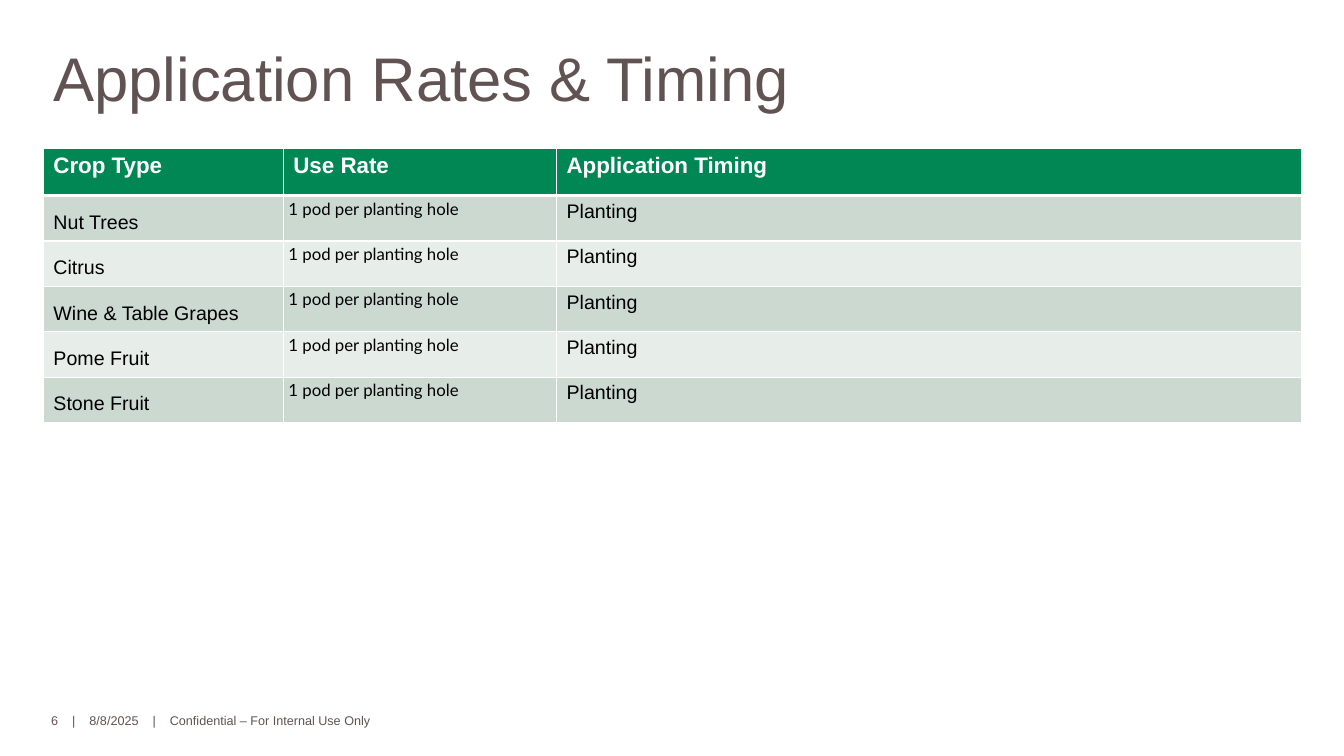
from dataclasses import dataclass

import pptx
import pptx.dml.color
import pptx.oxml
import pptx.oxml.ns
import pptx.util

Inches = pptx.util.Inches
Pt = pptx.util.Pt


@dataclass(frozen=True)
class Theme:
    font: str = "Arial"
    rate_font: str = "Lato"
    muted: str = "625353"
    header: str = "008753"
    bands: tuple = ("CCD9D1", "E7EDE9")
    white: str = "FFFFFF"
    black: str = "000000"
    title_size: int = 44
    header_size: int = 16
    body_size: int = 14
    rate_size: int = 12
    footer_size: int = 9


THEME = Theme()
HEADINGS = ("Crop Type", "Use Rate", "Application Timing")
CROPS = ("Nut Trees", "Citrus", "Wine & Table Grapes", "Pome Fruit", "Stone Fruit")
RATE = "1 pod per planting hole"
TIMING = "Planting"
COLUMN_WIDTHS = (2.38, 2.71, 7.39)
HEADER_HEIGHT = 0.47


def rgb(value):
    return pptx.dml.color.RGBColor.from_string(value)


def write_text(frame, text, size, color, font=THEME.font, bold=False, line_spacing=None):
    paragraph = frame.paragraphs[0]
    paragraph.line_spacing = line_spacing
    run = paragraph.add_run()
    run.text = text
    for name, value in {"name": font, "size": Pt(size), "bold": bold}.items():
        setattr(run.font, name, value)
    run.font.color.rgb = rgb(color)


def add_text(slide, box, text, **style):
    shape = slide.shapes.add_textbox(*map(Inches, box))
    shape.text_frame.word_wrap = True
    write_text(shape.text_frame, text, **style)


def set_borders(cell, **widths):
    """Draw white cell borders; widths are points keyed by side (L, R, T, B)."""
    properties = cell._tc.get_or_add_tcPr()
    for position, side in enumerate("LRTB"):
        width = Pt(widths.get(side, 1))
        line = pptx.oxml.parse_xml(
            f'<a:ln{side} {pptx.oxml.ns.nsdecls("a")} w="{width}"><a:solidFill>'
            f'<a:srgbClr val="{THEME.white}"/></a:solidFill></a:ln{side}>')
        properties.insert(position, line)


def fill_cell(cell, fill, text, borders, margins=None, **style):
    for name, value in (margins or {}).items():
        setattr(cell, name, Inches(value))
    cell.fill.solid()
    cell.fill.fore_color.rgb = rgb(fill)
    set_borders(cell, **borders)
    write_text(cell.text_frame, text, **style)


def add_rates_table(slide, box):
    left, top, width, height = map(Inches, box)
    table = slide.shapes.add_table(
        len(CROPS) + 1, len(HEADINGS), left, top, width, height).table
    for column, column_width in zip(table.columns, COLUMN_WIDTHS):
        column.width = Inches(column_width)
    row_height = (box[3] - HEADER_HEIGHT) / len(CROPS)
    for index, row in enumerate(table.rows):
        row.height = Inches(row_height if index else HEADER_HEIGHT)

    for column, heading in enumerate(HEADINGS):
        fill_cell(table.cell(0, column), THEME.header, heading, {"B": 3},
                  size=THEME.header_size, color=THEME.white, bold=True)

    body = {"size": THEME.body_size, "color": THEME.black}
    rate = {"size": THEME.rate_size, "color": THEME.black, "font": THEME.rate_font,
            "margins": {"margin_left": 0.05, "margin_right": 0.05,
                        "margin_top": 0.03, "margin_bottom": 0.03}}
    for index, crop in enumerate(CROPS):
        fill = THEME.bands[index % 2]
        borders = {} if index else {"T": 3}
        columns = ((crop, body | {"line_spacing": 1.5}), (RATE, rate), (TIMING, body))
        for column, (text, style) in enumerate(columns):
            fill_cell(table.cell(index + 1, column), fill, text, borders, **style)


def build_rates_slide(presentation):
    slide = presentation.slides.add_slide(presentation.slide_layouts[6])
    add_text(slide, (0.41, 7.02, 4.67, 0.25),
             "6\u00a0\u00a0\u00a0 |\u00a0\u00a0\u00a0 8/8/2025".replace("\u00a0", " ")
             + "    |    Confidential – For Internal Use Only",
             size=THEME.footer_size, color=THEME.muted)
    add_text(slide, (0.43, 0.5, 8.38, 1.37), "Application Rates & Timing",
             size=THEME.title_size, color=THEME.muted, line_spacing=Pt(41.8))
    add_rates_table(slide, (0.43, 1.47, sum(COLUMN_WIDTHS), 2.6))


def main():
    presentation = pptx.Presentation()
    presentation.slide_width = Inches(13.33)
    presentation.slide_height = Inches(7.5)
    build_rates_slide(presentation)
    presentation.save("out.pptx")


if __name__ == "__main__":
    main()
